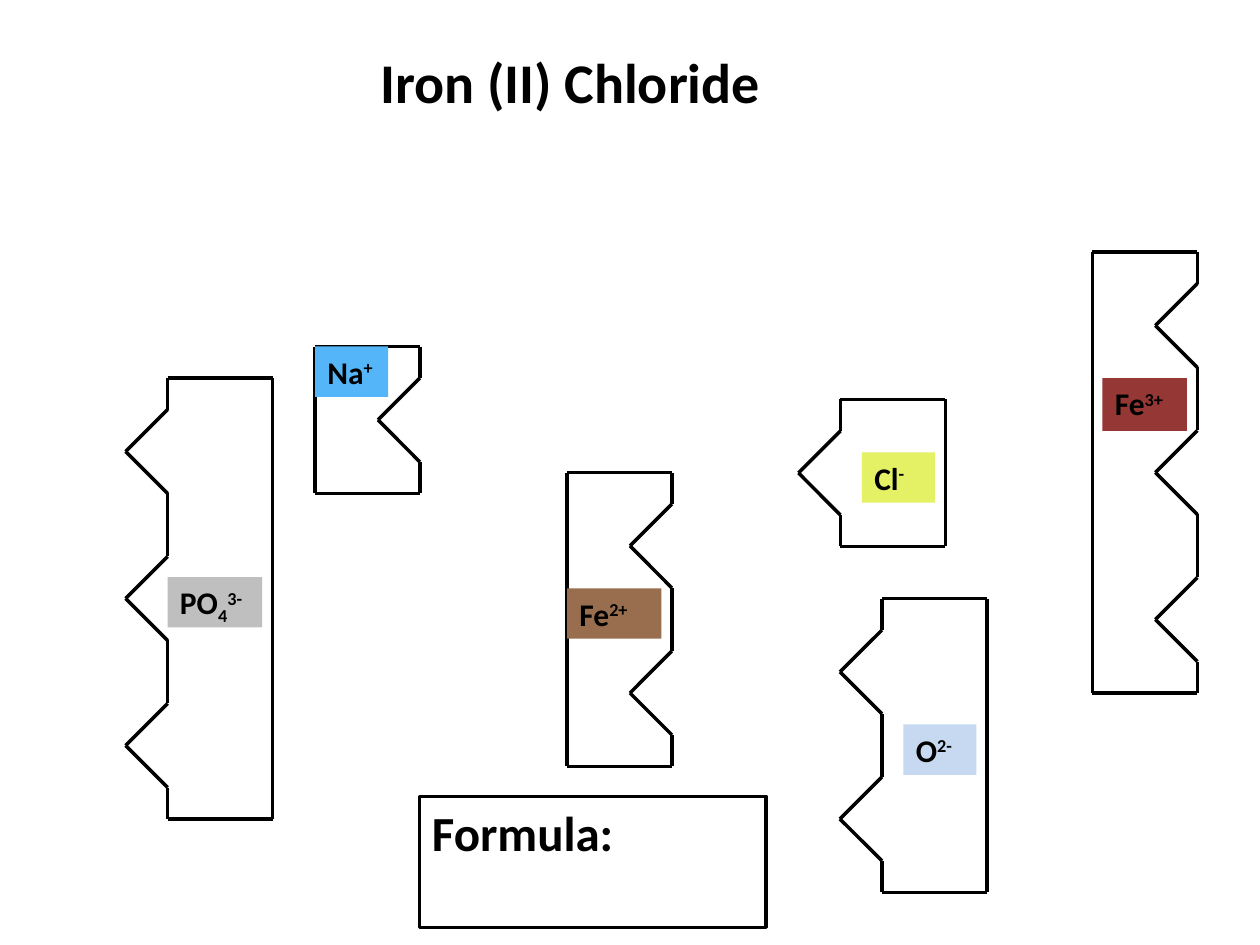
from dataclasses import dataclass

from lxml import etree
from pptx import Presentation
from pptx.dml.color import RGBColor
from pptx.enum.shapes import MSO_CONNECTOR, MSO_SHAPE
from pptx.enum.text import MSO_ANCHOR, PP_ALIGN
from pptx.oxml.ns import qn
from pptx.util import Inches, Pt

STRAIGHT = MSO_CONNECTOR.STRAIGHT
RECTANGLE = MSO_SHAPE.RECTANGLE
LEFT, TOP = PP_ALIGN.LEFT, MSO_ANCHOR.TOP


@dataclass(frozen=True)
class Theme:
    font: str = "Calibri"
    ink: str = "000000"
    title_size: int = 32
    formula_size: int = 28
    ion_size: int = 18
    line_width: int = 2
    sodium: str = "54B6F8"
    iron_two: str = "986E4E"
    iron_three: str = "953735"
    chloride: str = "E4F165"
    oxide: str = "C6D9F1"
    phosphate: str = "BFBFBF"


THEME = Theme()

# Every charge is one unit of height, with one tooth or notch in its middle.
BODY_WIDTH = 5 / 6
UNIT_HEIGHT = 7 / 6
TOOTH_DEPTH = 1 / 3
TOOTH_MARGIN = 0.25
SUPERSCRIPT, SUBSCRIPT = 30, -25

# toothed side, charge, body corner, label box from that corner, colour, text
IONS = [
    ("left", 2, (7, 4.75), (0.17, 1, 0.58, 0.4), THEME.oxide,
     [("O", 0), ("2-", SUPERSCRIPT)]),
    ("right", 2, (4.5, 3.75), (0, 0.92, 0.75, 0.4), THEME.iron_two,
     [("Fe", 0), ("2+", SUPERSCRIPT)]),
    ("right", 1, (2.5, 2.75), (0, 0, 0.58, 0.4), THEME.sodium,
     [("Na", 0), ("+", SUPERSCRIPT)]),
    ("right", 3, (8.67, 2), (0.08, 1, 0.67, 0.42), THEME.iron_three,
     [("Fe", 0), ("3+", SUPERSCRIPT)]),
    ("left", 3, (1.33, 3), (0, 1.58, 0.75, 0.4), THEME.phosphate,
     [("PO", 0), ("4", SUBSCRIPT), ("3-", SUPERSCRIPT)]),
    ("left", 1, (6.67, 3.17), (0.17, 0.42, 0.58, 0.4), THEME.chloride,
     [("Cl", 0), ("-", SUPERSCRIPT)]),
]


def color(value):
    return RGBColor.from_string(value)


def write_text(shape, spans, size):
    """Write (text, baseline percent) spans as one bold paragraph."""
    frame = shape.text_frame
    frame.word_wrap = True
    frame.vertical_anchor = TOP
    para = frame.paragraphs[0]
    para.alignment = LEFT
    para.font.name = THEME.font
    para.font.size = Pt(size)
    para.font.bold = True
    para.font.color.rgb = color(THEME.ink)
    for text, baseline in spans:
        span = para.add_run()
        span.text = text
        if baseline:
            span.font._element.set("baseline", str(baseline * 1000))


def add_rectangle(shapes, box, fill=None, outline=None):
    shape = shapes.add_shape(RECTANGLE, *map(Inches, box))
    shape.shadow.inherit = False
    if fill:
        shape.fill.solid()
        shape.fill.fore_color.rgb = color(fill)
    else:
        shape.fill.background()
    if outline:
        shape.line.color.rgb = color(outline)
        shape.line.width = Pt(THEME.line_width)
    else:
        shape.line.fill.background()
    return shape


def add_path(shapes, points):
    """Join the points in turn with straight lines."""
    for start, end in zip(points, points[1:]):
        line = shapes.add_connector(STRAIGHT, *map(Inches, start + end))
        line.line.color.rgb = color(THEME.ink)
        line.line.width = Pt(THEME.line_width)
        etree.SubElement(line._element.spPr, qn("a:effectLst"))


def add_ion(page, side, charge, corner, label_box, fill, spans):
    shapes = page.shapes.add_group_shape().shapes
    left, top = corner
    right, bottom = left + BODY_WIDTH, top + charge * UNIT_HEIGHT
    edge, back = (left, right) if side == "left" else (right, left)

    for y in (top, bottom):
        add_path(shapes, [(left, y), (right, y)])
    for index in range(charge):
        start = top + index * UNIT_HEIGHT
        end = start + UNIT_HEIGHT
        add_path(shapes, [(back, start), (back, end)])
        add_path(shapes, [
            (edge, start),
            (edge, start + TOOTH_MARGIN),
            (edge - TOOTH_DEPTH, start + UNIT_HEIGHT / 2),
            (edge, end - TOOTH_MARGIN),
            (edge, end),
        ])

    x, y, width, height = label_box
    label = add_rectangle(shapes, (left + x, top + y, width, height), fill)
    write_text(label, spans, THEME.ion_size)


def add_title(page, box):
    title = page.shapes.add_textbox(*map(Inches, box))
    write_text(title, [("Iron (II) Chloride", 0)], THEME.title_size)


def add_formula(page, box):
    formula = add_rectangle(page.shapes, box, outline=THEME.ink)
    write_text(formula, [("Formula:", 0)], THEME.formula_size)


def main():
    deck = Presentation()
    deck.slide_width, deck.slide_height = Inches(10), Inches(7.5)
    page = deck.slides.add_slide(deck.slide_layouts[6])
    add_title(page, (2.92, 0.33, 4.67, 0.64))
    add_formula(page, (3.33, 6.32, 2.75, 1.04))
    for ion in IONS:
        add_ion(page, *ion)
    deck.save("out.pptx")


if __name__ == "__main__":
    main()
